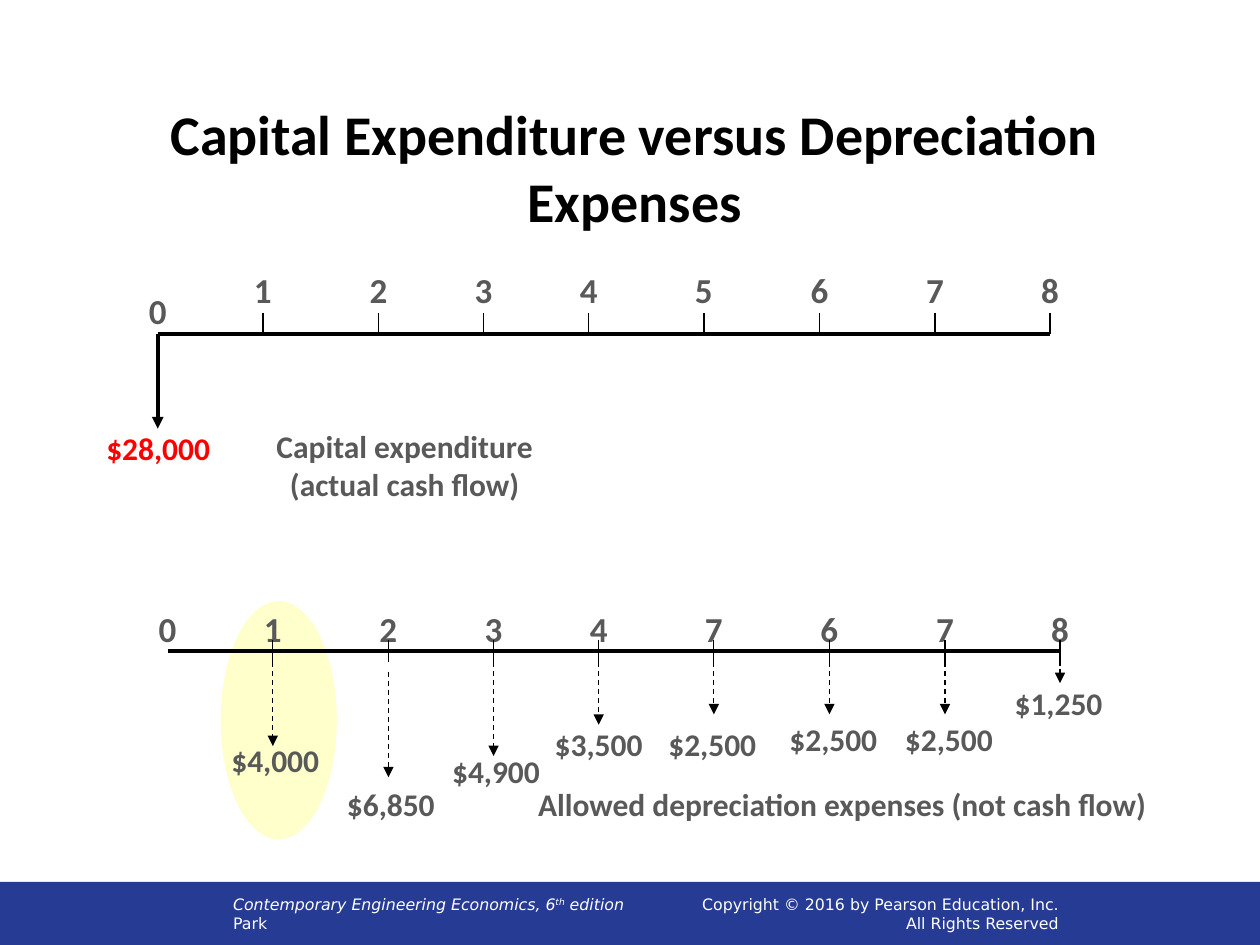
from dataclasses import dataclass

from lxml import etree
from pptx import Presentation
from pptx import util as u
from pptx.dml.color import RGBColor
from pptx.enum import dml, shapes, text
from pptx.oxml.ns import qn


@dataclass(frozen=True)
class Theme:
    black: str = "000000"
    gray: str = "595959"
    red: str = "FF0000"
    white: str = "FFFFFF"
    navy: str = "263B94"
    highlight: str = "FFFFCC"
    body_font: str = "Calibri"
    footer_font: str = "DejaVu Sans"
    title_size: float = 32
    year_size: float = 20
    amount_size: float = 18
    footer_size: float = 9
    thick: float = 2.25
    thin: float = 0.75


@dataclass(frozen=True)
class Box:
    left: float
    top: float
    width: float
    height: float

    def lengths(self) -> tuple:
        return u.Cm(self.left), u.Cm(self.top), u.Cm(self.width), u.Cm(self.height)


@dataclass(frozen=True)
class Timeline:
    left: float
    axis: float
    tick_top: float
    tick_bottom: float
    first_label_top: float
    label_top: float
    labels: str


@dataclass(frozen=True)
class Depreciation:
    year: int
    amount: str
    start: float
    tip: float
    label_top: float
    label_shift: float = 0


THEME = Theme()
YEAR_OFFSETS = (0, 2.12, 4.45, 6.57, 8.69, 11.01, 13.34, 15.67, 17.99)
SPENDING = Timeline(3.18, 6.73, 6.3, 6.73, 5.72, 5.28, "012345678")
EXPENSES = Timeline(3.38, 13.13, 12.9, 13.34, 12.12, 12.12, "012347678")
DEPRECIATIONS = (
    Depreciation(1, "$4,000", 13.34, 15.04, 14.81, 0.05),
    Depreciation(2, "$6,850", 13.54, 15.67, 15.7, 0.05),
    Depreciation(3, "$4,900", 13.34, 15.24, 15.04, 0.05),
    Depreciation(4, "$3,500", 13.34, 14.61, 14.5),
    Depreciation(5, "$2,500", 13.34, 14.4, 14.5, -0.03),
    Depreciation(6, "$2,500", 13.34, 14.4, 14.4, 0.08),
    Depreciation(7, "$2,500", 13.34, 14.4, 14.4, 0.08),
    Depreciation(8, "$1,250", 13.13, 13.77, 13.67, -0.03),
)


def add_filled(slide, kind, box: Box, color: str) -> None:
    shape = slide.shapes.add_shape(kind, *box.lengths())
    shape.shadow.inherit = False
    shape.fill.solid()
    shape.fill.fore_color.rgb = RGBColor.from_string(color)
    shape.line.fill.background()


def add_line(slide, start: tuple, end: tuple, width: float,
             arrow: bool = False, dashed: bool = False) -> None:
    connector = slide.shapes.add_connector(
        shapes.MSO_CONNECTOR.STRAIGHT, *(u.Cm(value) for value in start + end))
    connector.line.color.rgb = RGBColor.from_string(THEME.black)
    connector.line.width = u.Pt(width)
    if dashed:
        connector.line.dash_style = dml.MSO_LINE.DASH
    properties = connector.element.spPr
    if arrow:
        etree.SubElement(properties.find(qn("a:ln")), qn("a:tailEnd"), type="triangle")
    etree.SubElement(properties, qn("a:effectLst"))


def add_text(slide, box: Box, lines: tuple, size: float, color: str = THEME.gray,
             font: str = THEME.body_font, bold: bool = True,
             align=text.PP_ALIGN.CENTER, wrap: bool = False,
             anchor=text.MSO_ANCHOR.TOP) -> list:
    frame = slide.shapes.add_textbox(*box.lengths()).text_frame
    frame.word_wrap = wrap
    frame.vertical_anchor = anchor
    frame.text = "\n".join(lines)
    for paragraph in frame.paragraphs:
        paragraph.alignment = align
        paragraph.font.name = font
        paragraph.font.size = u.Pt(size)
        paragraph.font.bold = bold
        paragraph.font.color.rgb = RGBColor.from_string(color)
    return list(frame.paragraphs)


def add_footer(slide) -> None:
    add_filled(slide, shapes.MSO_SHAPE.RECTANGLE, Box(0, 17.78, 25.4, 1.27), THEME.navy)
    style = dict(size=THEME.footer_size, color=THEME.white, font=THEME.footer_font,
                 bold=False, wrap=True, anchor=text.MSO_ANCHOR.MIDDLE)
    book = add_text(slide, Box(4.45, 17.78, 15.65, 1.27),
                    ("Contemporary Engineering Economics, 6", "Park"),
                    align=text.PP_ALIGN.LEFT, **style)[0]
    book.font.italic = True
    ordinal = book.add_run()
    ordinal.text = "th"
    ordinal.font._element.set("baseline", "30000")
    book.add_run().text = " edition"
    add_text(slide, Box(12.5, 17.78, 9.09, 1.27),
             ("Copyright © 2016 by Pearson Education, Inc.", "All Rights Reserved"),
             align=text.PP_ALIGN.RIGHT, **style)


def add_timeline(slide, timeline: Timeline) -> None:
    add_line(slide, (timeline.left, timeline.axis),
             (timeline.left + YEAR_OFFSETS[-1], timeline.axis), THEME.thick)
    for year, (offset, label) in enumerate(zip(YEAR_OFFSETS, timeline.labels)):
        x = timeline.left + offset
        top = timeline.label_top if year else timeline.first_label_top
        add_text(slide, Box(x - 0.43, top, 0.86, 1.12), (label,), THEME.year_size)
        if year:
            add_line(slide, (x, timeline.tick_bottom), (x, timeline.tick_top), THEME.thin)


def add_depreciation(slide, item: Depreciation) -> None:
    x = EXPENSES.left + YEAR_OFFSETS[item.year]
    add_line(slide, (x, item.start), (x, item.tip), THEME.thin, arrow=True, dashed=True)
    add_text(slide, Box(x + item.label_shift - 1.14, item.label_top, 2.28, 1.02),
             (item.amount,), THEME.amount_size)


def main() -> None:
    presentation = Presentation()
    presentation.slide_width, presentation.slide_height = u.Cm(25.4), u.Cm(19.05)
    slide = presentation.slides.add_slide(presentation.slide_layouts[6])
    add_footer(slide)
    add_text(slide, Box(1.27, 1.96, 23.06, 2.79),
             ("Capital Expenditure versus Depreciation Expenses",), THEME.title_size,
             THEME.black, wrap=True, anchor=text.MSO_ANCHOR.MIDDLE)
    add_filled(slide, shapes.MSO_SHAPE.OVAL, Box(4.45, 12.12, 2.34, 4.8), THEME.highlight)
    add_timeline(slide, SPENDING)
    add_line(slide, (SPENDING.left, SPENDING.axis), (SPENDING.left, 8.64),
             THEME.thick, arrow=True)
    add_text(slide, Box(1.88, 8.53, 2.62, 1.02), ("$28,000",), THEME.amount_size, THEME.red)
    add_text(slide, Box(5.3, 8.48, 5.72, 1.8),
             ("Capital expenditure", "(actual cash flow)"), THEME.amount_size)
    add_timeline(slide, EXPENSES)
    for item in DEPRECIATIONS:
        add_depreciation(slide, item)
    add_text(slide, Box(10.54, 15.7, 12.88, 1.02),
             ("Allowed depreciation expenses (not cash flow)",), THEME.amount_size)
    presentation.save("out.pptx")


if __name__ == "__main__":
    main()
